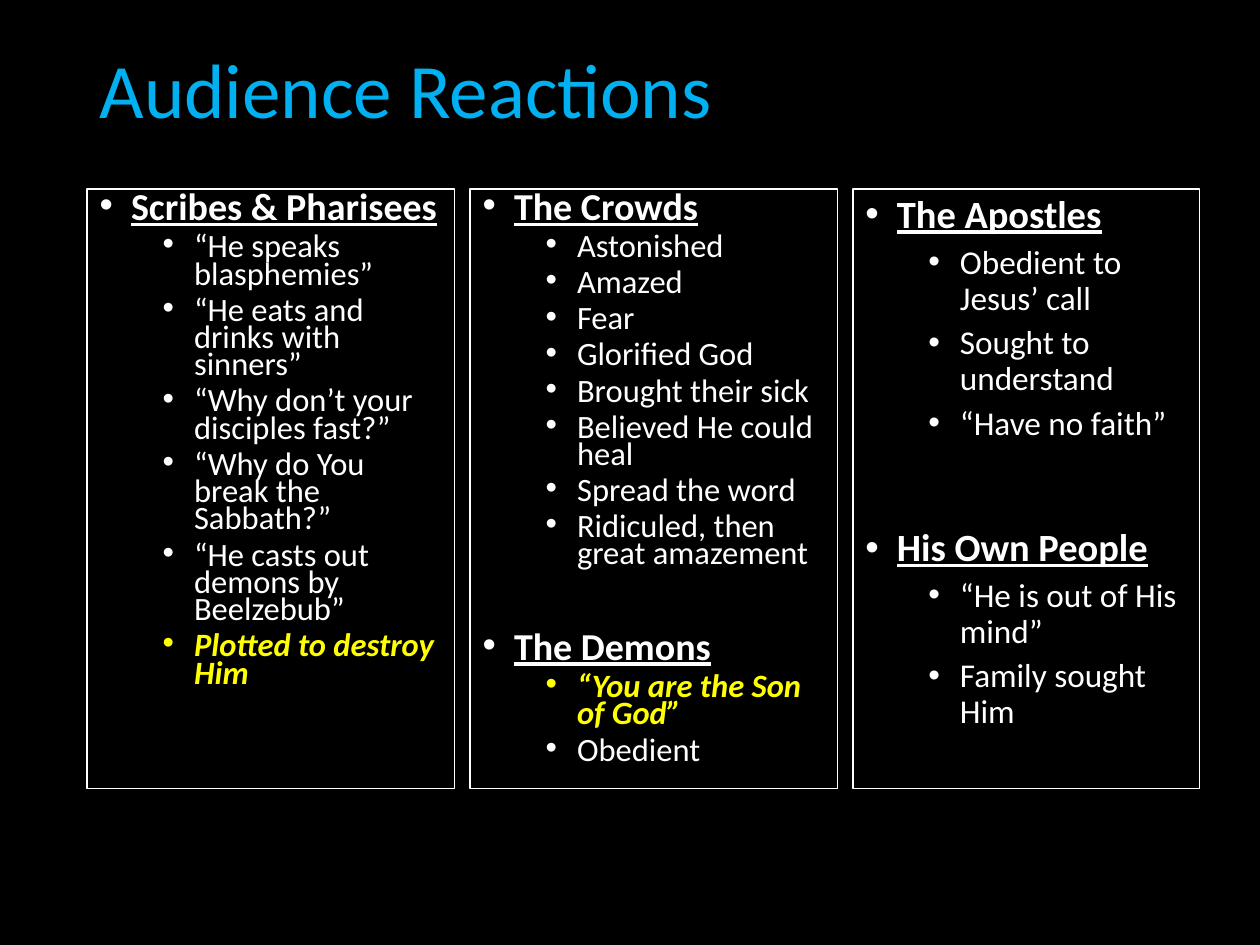
"""Build the Audience Reactions slide with three bordered columns of lists."""
import pptx
import pptx.dml.color
import pptx.enum.shapes
import pptx.enum.text
import pptx.oxml
import pptx.oxml.ns
import pptx.util
from lxml import etree
from pptx.util import Inches, Pt

COLORS = {"background": "000000", "title": "00B0F0", "text": "FFFFFF", "key": "FFFF00"}
FONT = "Calibri"
TITLE = "Audience Reactions"
KEY_REACTIONS = {"Plotted to destroy Him", "“You are the Son of God”"}
COLUMNS = [
    {
        "width": 2.92, "heading_size": 21.7, "item_size": 18.6, "spacing": 0.7, "gap": 37,
        "groups": [
            ("Scribes & Pharisees", [
                "“He speaks blasphemies”",
                "“He eats and drinks with sinners”",
                "“Why don’t your disciples fast?”",
                "“Why do You break the Sabbath?”",
                "“He casts out demons by Beelzebub”",
                "Plotted to destroy Him",
            ]),
        ],
    },
    {
        "width": 2.92, "heading_size": 21.7, "item_size": 18.6, "spacing": 0.7, "gap": 37,
        "groups": [
            ("The Crowds", [
                "Astonished", "Amazed", "Fear", "Glorified God", "Brought their sick",
                "Believed He could heal", "Spread the word",
                "Ridiculed, then great amazement",
            ]),
            ("The Demons", ["“You are the Son of God”", "Obedient"]),
        ],
    },
    {
        "width": 2.75, "heading_size": 22, "item_size": 19, "spacing": 0.9, "gap": 49,
        "groups": [
            ("The Apostles", [
                "Obedient to Jesus’ call", "Sought to understand", "“Have no faith”",
            ]),
            ("His Own People", ["“He is out of His mind”", "Family sought Him"]),
        ],
    },
]
LEFT, TOP, HEIGHT, GUTTER = 0.69, 1.5, 4.76, 0.12


def rgb(name):
    """Return the named colour."""
    return pptx.dml.color.RGBColor.from_string(COLORS[name])


def place(box, left, top, width, height):
    """Move and size a box, in inches."""
    box.left, box.top = Inches(left), Inches(top)
    box.width, box.height = Inches(width), Inches(height)


def write(frame, text, size, color="text", bold=False, italic=False, underline=False,
          spacing=0.9, before=0, level=0, indent=None):
    """Add a formatted paragraph, bulleted when an indent is given."""
    paragraph = frame.paragraphs[0]
    if paragraph.runs:
        paragraph = frame.add_paragraph()
    paragraph.alignment = pptx.enum.text.PP_ALIGN.LEFT
    paragraph.level = level
    paragraph.line_spacing = spacing
    paragraph.space_before = Pt(before)
    paragraph.space_after = Pt(0)
    run = paragraph.add_run()
    run.text = text
    font = run.font
    font.name, font.size = FONT, Pt(size)
    font.bold, font.italic, font.underline = bold, italic, underline
    font.color.rgb = rgb(color)
    if indent is not None:
        properties = paragraph._p.get_or_add_pPr()
        properties.set("marL", str(Inches(indent)))
        properties.set("indent", str(Inches(-0.25)))
        for tag, key, value in (("a:buFont", "typeface", "Arial"), ("a:buChar", "char", "•")):
            etree.SubElement(properties, pptx.oxml.ns.qn(tag)).set(key, value)


def fill_column(box, column):
    """Border a column and write its headings and reactions."""
    box.fill.background()
    box.line.color.rgb = rgb("text")
    box.line.width = Pt(0.75)
    frame = box.text_frame
    frame.word_wrap = True
    frame.auto_size = pptx.enum.text.MSO_AUTO_SIZE.NONE
    frame.vertical_anchor = pptx.enum.text.MSO_ANCHOR.TOP
    for number, (heading, reactions) in enumerate(column["groups"]):
        write(frame, heading, column["heading_size"], bold=True, underline=True,
              spacing=column["spacing"], before=column["gap"] if number else 10, indent=0.25)
        for reaction in reactions:
            key = reaction in KEY_REACTIONS
            write(frame, reaction, column["item_size"], color="key" if key else "text",
                  bold=key, italic=key, spacing=column["spacing"], before=5,
                  level=1, indent=0.75)


def main():
    """Create and save the slide."""
    deck = pptx.Presentation()
    deck.slide_width, deck.slide_height = Inches(10), Inches(7.5)
    slide = deck.slides.add_slide(deck.slide_layouts.get_by_name("Two Content"))
    slide.background.fill.solid()
    slide.background.fill.fore_color.rgb = rgb("background")

    title = slide.shapes.title
    place(title, LEFT, 0.02, 8.62, 1.45)
    title.text_frame.vertical_anchor = pptx.enum.text.MSO_ANCHOR.MIDDLE
    write(title.text_frame, TITLE, 44, color="title")

    apostles = slide.shapes.add_shape(pptx.enum.shapes.MSO_SHAPE.RECTANGLE, 0, 0, 0, 0)
    apostles.shadow.inherit = False
    left = LEFT
    for box, column in zip((slide.placeholders[1], slide.placeholders[2], apostles), COLUMNS):
        place(box, left, TOP, column["width"], HEIGHT)
        fill_column(box, column)
        left += column["width"] + GUTTER
    deck.save("out.pptx")


if __name__ == "__main__":
    main()
